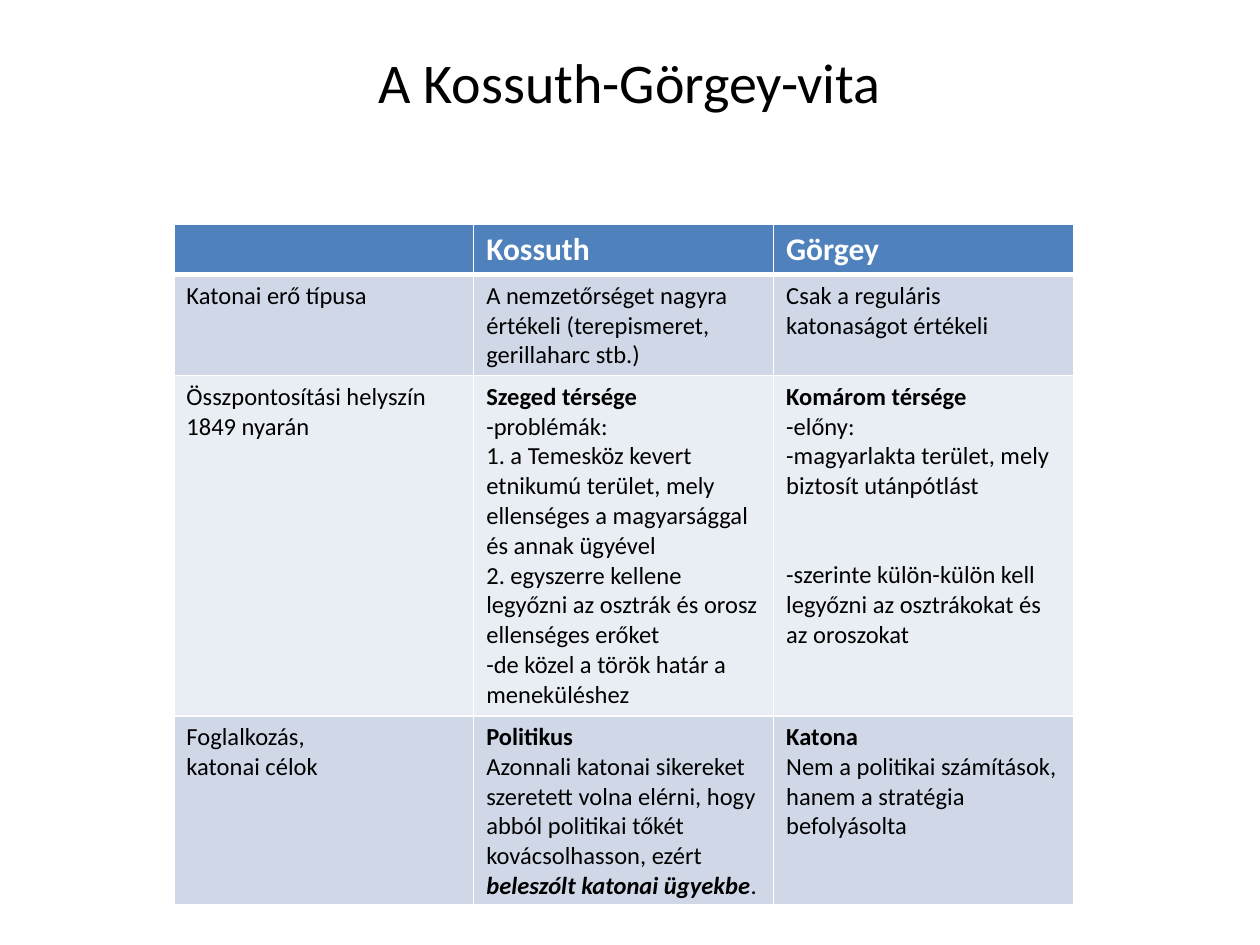
from dataclasses import dataclass

from lxml.etree import SubElement
from pptx import Presentation
from pptx.dml.color import RGBColor
from pptx.enum.text import MSO_ANCHOR, PP_ALIGN
from pptx.oxml.ns import qn
from pptx.util import Inches, Pt


@dataclass(frozen=True)
class Theme:
    """Colours and type sizes of the slide."""
    font: str = "Calibri"
    ink: str = "000000"
    white: str = "FFFFFF"
    header: str = "4F81BD"
    bands: tuple = ("D0D8E8", "E9EDF4")
    title_size: int = 32
    header_size: int = 18
    body_size: int = 14


THEME = Theme()
BOLD = {"bold": True}
BOLD_ITALIC = {"bold": True, "italic": True}
COLUMN_WIDTH = 2.38
ROW_HEIGHTS = (0.4, 0.8, 2.7, 1.5)
HEADINGS = ("", "Kossuth", "Görgey")

ROWS = (
    (
        ["Katonai erő típusa"],
        ["A nemzetőrséget nagyra értékeli (terepismeret, gerillaharc stb.)"],
        ["Csak a reguláris katonaságot értékeli"],
    ),
    (
        ["Összpontosítási helyszín 1849 nyarán"],
        [
            [("Szeged térsége", BOLD)],
            "-problémák:",
            "1. a Temesköz kevert etnikumú terület, mely ellenséges a magyarsággal és annak ügyével",
            "2. egyszerre kellene legyőzni az osztrák és orosz ellenséges erőket",
            "-de közel a török határ a meneküléshez",
        ],
        [
            [("Komárom térsége", BOLD)],
            "-előny:",
            "-magyarlakta terület, mely biztosít utánpótlást",
            [("-szerinte külön-külön kell legyőzni az osztrákokat és az oroszokat", {})],
        ],
    ),
    (
        ["Foglalkozás,", "katonai célok"],
        [
            [("Politikus", BOLD)],
            [
                ("Azonnali katonai sikereket szeretett volna elérni, hogy abból "
                 "politikai tőkét kovácsolhasson, ezért ", {}),
                ("beleszólt katonai ügyekbe", BOLD_ITALIC),
                (".", {}),
            ],
        ],
        [
            [("Katona", BOLD)],
            "Nem a politikai számítások, hanem a stratégia befolyásolta",
        ],
    ),
)


def add_span(para, text, size, color, **style):
    """Add one formatted run to a paragraph."""
    span = para.add_run()
    span.text = text
    values = {"name": THEME.font, "size": Pt(size), "bold": False, "italic": False}
    for name, value in {**values, **style}.items():
        setattr(span.font, name, value)
    span.font.color.rgb = RGBColor.from_string(color)


def write_paragraphs(frame, paragraphs, size, color):
    """Write plain strings or lists of styled spans as paragraphs."""
    for index, content in enumerate(paragraphs):
        para = frame.add_paragraph() if index else frame.paragraphs[0]
        spans = [(content, {})] if isinstance(content, str) else content
        for text, style in spans:
            add_span(para, text, size, color, **style)


def set_borders(cell, bottom):
    """Give a cell white borders with the given bottom width in points."""
    properties = cell._tc.get_or_add_tcPr()
    for side, width in {"L": 1, "R": 1, "T": 1, "B": bottom}.items():
        line = SubElement(properties, qn(f"a:ln{side}"), w=str(Pt(width)))
        fill = SubElement(line, qn("a:solidFill"))
        SubElement(fill, qn("a:srgbClr"), val=THEME.white)


def paint_cell(cell, color, bottom=1):
    """Set the borders and the fill of a cell."""
    set_borders(cell, bottom)
    cell.fill.solid()
    cell.fill.fore_color.rgb = RGBColor.from_string(color)


def add_title(page, text):
    """Add the centred slide title."""
    box = page.shapes.add_textbox(Inches(0), Inches(0.3), Inches(10), Inches(0.69))
    frame = box.text_frame
    for name, value in {"word_wrap": True, "vertical_anchor": MSO_ANCHOR.MIDDLE}.items():
        setattr(frame, name, value)
    write_paragraphs(frame, [text], THEME.title_size, THEME.ink)
    frame.paragraphs[0].alignment = PP_ALIGN.CENTER


def add_comparison(page):
    """Add the table that compares the two men."""
    table = page.shapes.add_table(
        len(ROW_HEIGHTS), len(HEADINGS), Inches(1.38), Inches(1.78),
        Inches(COLUMN_WIDTH * len(HEADINGS)), Inches(sum(ROW_HEIGHTS))).table
    for column in table.columns:
        column.width = Inches(COLUMN_WIDTH)
    for row, height in zip(table.rows, ROW_HEIGHTS):
        row.height = Inches(height)
    for column, heading in enumerate(HEADINGS):
        cell = table.cell(0, column)
        paint_cell(cell, THEME.header, bottom=3)
        if heading:
            write_paragraphs(cell.text_frame, [[(heading, BOLD)]],
                             THEME.header_size, THEME.white)
    for index, contents in enumerate(ROWS):
        for column, paragraphs in enumerate(contents):
            cell = table.cell(index + 1, column)
            paint_cell(cell, THEME.bands[index % 2])
            write_paragraphs(cell.text_frame, paragraphs, THEME.body_size, THEME.ink)
    table.cell(2, 2).text_frame.paragraphs[-1].space_before = Pt(34)


def main():
    """Build and save the deck."""
    deck = Presentation()
    deck.slide_width, deck.slide_height = Inches(10), Inches(7.5)
    page = deck.slides.add_slide(deck.slide_layouts[6])
    add_title(page, "A Kossuth-Görgey-vita")
    add_comparison(page)
    deck.save("out.pptx")


if __name__ == "__main__":
    main()
